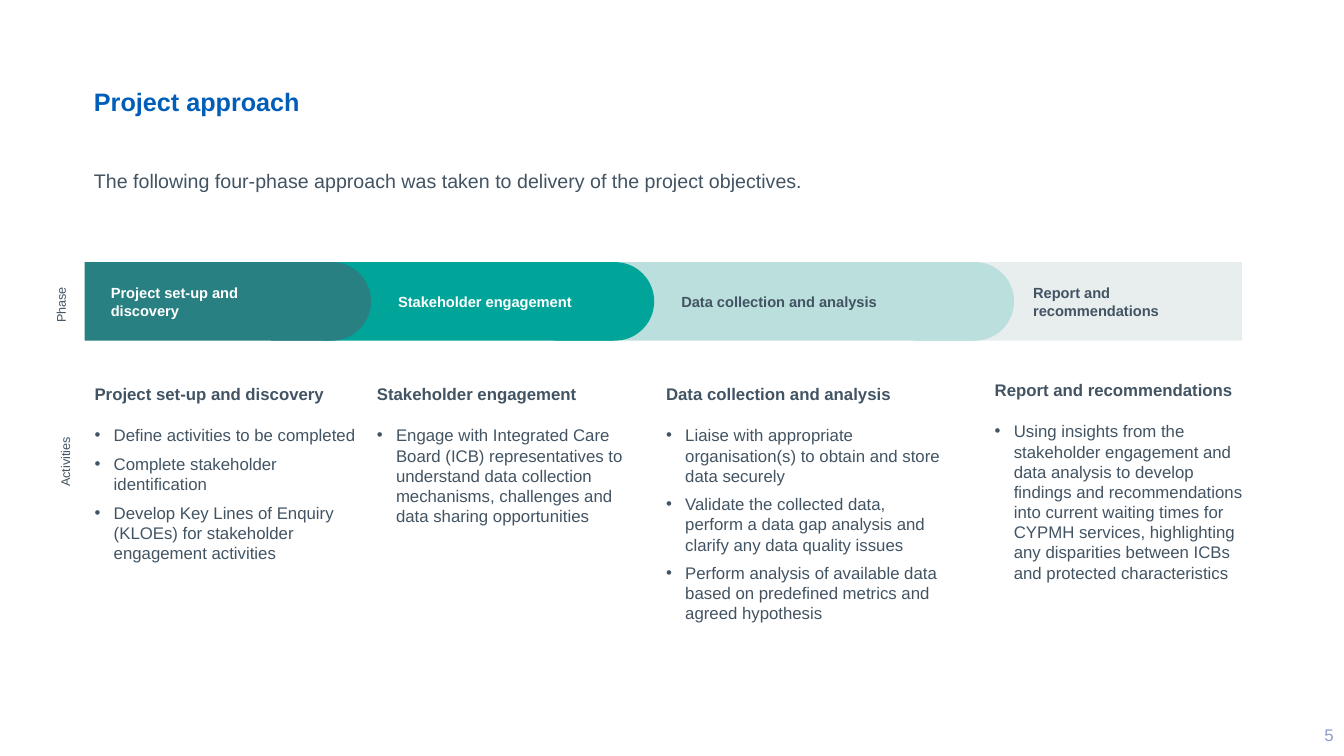
import math
from dataclasses import dataclass

from lxml import etree
from pptx import Presentation, util as u
from pptx.dml.color import RGBColor
from pptx.enum import shapes, text
from pptx.oxml.ns import qn

COLS, ROWS = 160, 90  # square grid over the slide
CELL = u.Inches(7.5) / ROWS


@dataclass(frozen=True)
class Theme:
    face: str = "Arial"
    blue: str = "005EB8"
    slate: str = "425463"
    pale: str = "8C9DCD"
    white: str = "FFFFFF"
    deep: str = "298082"
    teal: str = "00A499"
    mint: str = "BADFDC"
    mist: str = "E8EDEE"
    title: float = 18
    lead: float = 14
    body: float = 12
    phase: float = 10.5
    side: float = 9


T = Theme()
TOP, HIGH = 31.2, 9.36  # phase band
MID = TOP + HIGH / 2

# Band: left, width, colour
BANDS = [
    (10.08, 29.16, T.deep),
    (38.4, 34.68, T.teal),
    (73.92, 41.88, T.mint),
    (115.8, 32.04, T.mist),
]
# Round ends: left, colour
CAPS = [(32.28, T.deep), (66, T.teal), (108.84, T.mint)]

# Phase name; label left, width, height, ink; activity left, top, width, height; items
PHASES = [
    ("Project set-up and discovery",
     (10.8, 28.44, 9, T.white), (10.08, 45.12, 33.6, 22.56),
     ["Define activities to be completed",
      "Complete stakeholder identification",
      "Develop Key Lines of Enquiry (KLOEs) for stakeholder engagement activities"]),
    ("Stakeholder engagement",
     (45, 28.44, 6.84, T.white), (43.68, 45.12, 32.64, 20.64),
     ["Engage with Integrated Care Board (ICB) representatives to understand data "
      "collection mechanisms, challenges and data sharing opportunities"]),
    ("Data collection and analysis",
     (78.72, 38.88, 6.84, T.slate), (78.12, 45.12, 35.52, 29.88),
     ["Liaise with appropriate organisation(s) to obtain and store data securely",
      "Validate the collected data, perform a data gap analysis and clarify any "
      "data quality issues",
      "Perform analysis of available data based on predefined metrics and agreed "
      "hypothesis"]),
    ("Report and recommendations",
     (120.6, 27.12, 9, T.slate), (117.24, 44.64, 32.04, 25.44),
     ["Using insights from the stakeholder engagement and data analysis to develop "
      "findings and recommendations into current waiting times for CYPMH services, "
      "highlighting any disparities between ICBs and protected characteristics"]),
]


def grid(*cells):
    return [round(c * CELL) for c in cells]


def paint(shape, color):
    shape.shadow.inherit = False
    shape.fill.solid()
    shape.fill.fore_color.rgb = RGBColor.from_string(color)
    shape.line.fill.background()


def style(para, size, color, bold=False):
    font = para.font
    font.name, font.size, font.bold = T.face, u.Pt(size), bold
    font.color.rgb = RGBColor.from_string(color)


def write(slide, words, area, size, color, bold=False,
          align=text.PP_ALIGN.LEFT, anchor=text.MSO_ANCHOR.TOP):
    box = slide.shapes.add_textbox(*grid(*area))
    frame = box.text_frame
    frame.word_wrap, frame.vertical_anchor = True, anchor
    para = frame.paragraphs[0]
    para.text, para.alignment = words, align
    style(para, size, color, bold)
    return box


def band(slide, left, width, color):
    rect = slide.shapes.add_shape(
        shapes.MSO_SHAPE.RECTANGLE, *grid(left, TOP, width, HIGH))
    paint(rect, color)


def cap(slide, left, color):
    # Straight part, then a half circle on the right
    rad, steps = HIGH / 2, 40
    hub = left + 7.2
    turns = [math.pi * (i / steps - 0.5) for i in range(steps + 1)]
    arc = [grid(hub + rad * math.cos(a), MID + rad * math.sin(a)) for a in turns]
    form = slide.shapes.build_freeform(*grid(left, TOP))
    form.add_line_segments(arc + [grid(left, TOP + HIGH)], close=True)
    paint(form.convert_to_shape(), color)


def label(slide, name, left, width, height, ink):
    box = write(slide, name, (left, MID - height / 2, width, height),
                T.phase, ink, True, anchor=text.MSO_ANCHOR.MIDDLE)
    frame = box.text_frame
    frame.margin_left = frame.margin_right = u.Inches(0.2)
    frame.margin_top = frame.margin_bottom = 0


def side(slide, words, x, y):
    box = write(slide, words, (x - 5, y - 1.5, 10, 3), T.side, T.slate,
                align=text.PP_ALIGN.CENTER)
    box.rotation = 270


def tasks(slide, name, area, items):
    frame = write(slide, name, area, T.body, T.slate, True).text_frame
    frame.paragraphs[0].space_after = u.Pt(15)
    for item in items:
        para = frame.add_paragraph()
        para.text, para.space_after = item, u.Pt(6)
        props = para._p.get_or_add_pPr()
        props.set("marL", str(u.Inches(0.19)))
        props.set("indent", str(u.Inches(-0.19)))
        etree.SubElement(props, qn("a:buFont")).set("typeface", T.face)
        etree.SubElement(props, qn("a:buChar")).set("char", "•")
        style(para, T.body, T.slate)


def main():
    deck = Presentation()
    deck.slide_width, deck.slide_height = grid(COLS, ROWS)
    slide = deck.slides.add_slide(deck.slide_layouts[6])

    # Heading, lead and page number
    head = write(slide, "Project approach", (10, 10.08, 63, 9.6),
                 T.title, T.blue, True)
    lead = write(slide, "The following four-phase approach was taken to delivery "
                 "of the project objectives.", (10, 19.8, 146.4, 10.68),
                 T.lead, T.slate)
    for box in (head, lead):
        box.text_frame.paragraphs[0].line_spacing = 0.9
    write(slide, "5", (148.32, 85.08, 11.64, 4.8), T.body, T.pale,
          align=text.PP_ALIGN.RIGHT, anchor=text.MSO_ANCHOR.MIDDLE)

    # Row names
    side(slide, "Phase", 7.26, 36.3)
    side(slide, "Activities", 7.74, 55)

    # Phase band
    for row in BANDS:
        band(slide, *row)
    for end in CAPS:
        cap(slide, *end)

    # Phase labels and activities
    for name, spot, area, items in PHASES:
        label(slide, name, *spot)
        tasks(slide, name, area, items)

    deck.save("out.pptx")


if __name__ == "__main__":
    main()
